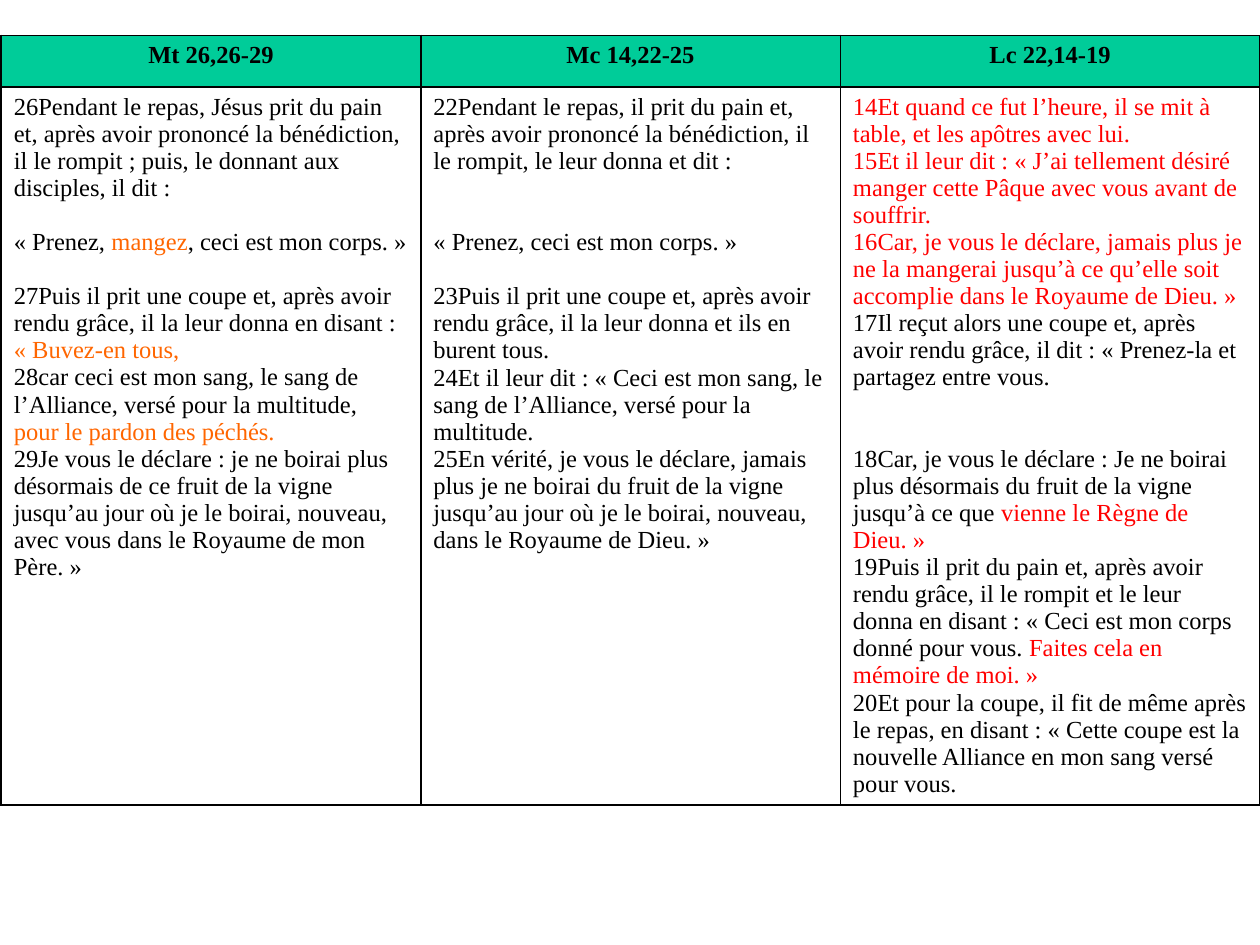
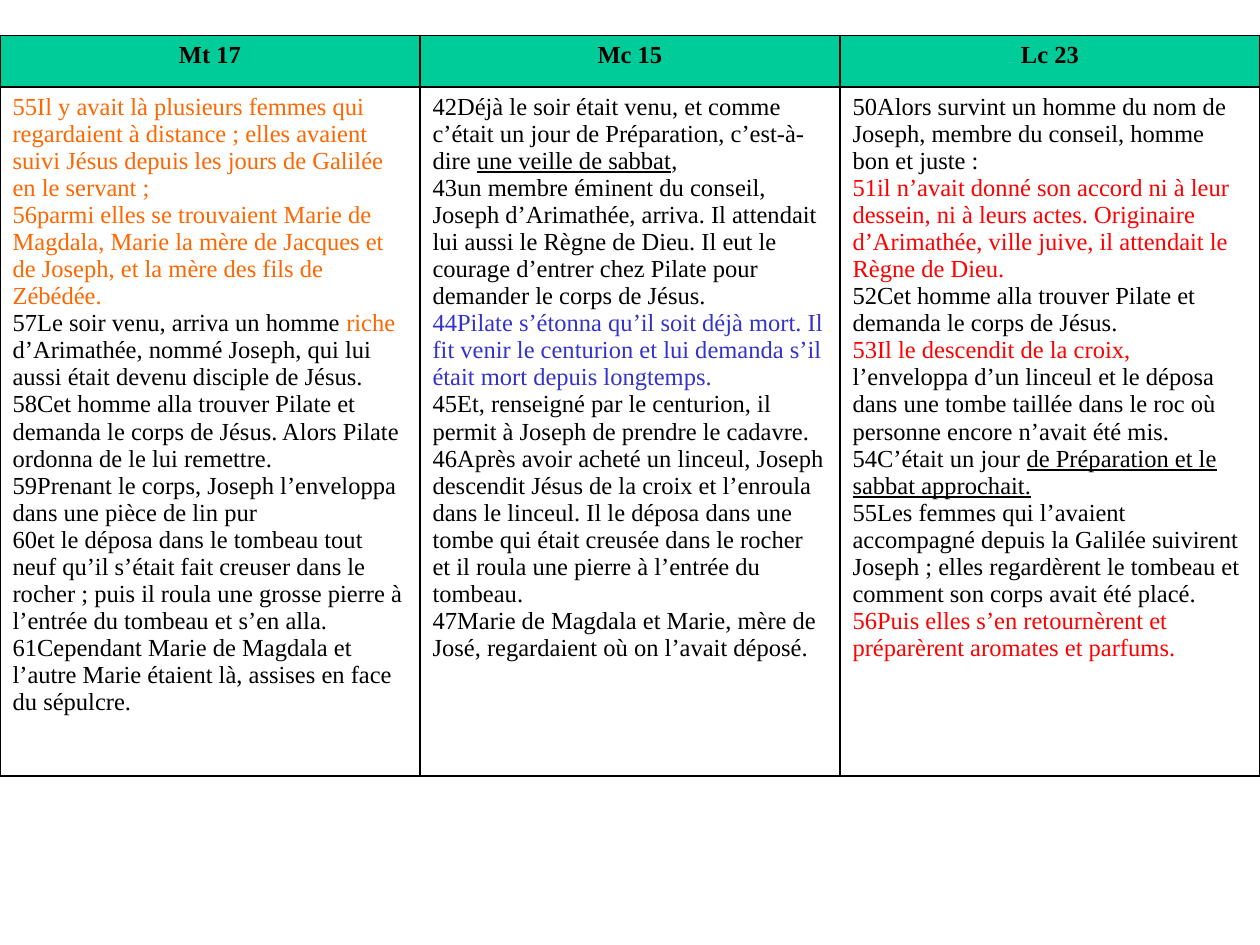
from collections import namedtuple

from lxml import etree
from pptx import Presentation
from pptx.dml.color import RGBColor
from pptx.enum.text import PP_ALIGN
from pptx.oxml.ns import qn
from pptx.util import Inches, Pt

BLACK = RGBColor(0x00, 0x00, 0x00)
WHITE = RGBColor(0xFF, 0xFF, 0xFF)
GREEN = RGBColor(0x00, 0xCC, 0x99)
ORANGE = RGBColor(0xFF, 0x66, 0x00)
RED = RGBColor(0xFF, 0x00, 0x00)
BLUE = RGBColor(0x33, 0x33, 0xCC)

Run = namedtuple("Run", "text color underline", defaults=(BLACK, False))
Verse = namedtuple("Verse", "runs gap")


def verse(*runs, gap=0):
    """One paragraph; gap is the number of free lines above it."""
    return Verse([r if isinstance(r, Run) else Run(r) for r in runs], gap)


# The Last Supper
SUPPER = {
    "Mt 26,26-29": [
        verse("26Pendant le repas, Jésus prit du pain et, après avoir prononcé la "
              "bénédiction, il le rompit ; puis, le donnant aux disciples, il dit :"),
        verse("« Prenez, ", Run("mangez", ORANGE), ", ceci est mon corps. »", gap=1),
        verse("27Puis il prit une coupe et, après avoir rendu grâce, il la leur "
              "donna en disant : ", Run("« Buvez-en tous,", ORANGE), gap=1),
        verse("28car ceci est mon sang, le sang de l’Alliance, versé pour la "
              "multitude, ", Run("pour le pardon des péchés.", ORANGE)),
        verse("29Je vous le déclare : je ne boirai plus désormais de ce fruit de la "
              "vigne jusqu’au jour où je le boirai, nouveau, avec vous dans le "
              "Royaume de mon Père. »"),
    ],
    "Mc 14,22-25": [
        verse("22Pendant le repas, il prit du pain et, après avoir prononcé la "
              "bénédiction, il le rompit, le leur donna et dit :"),
        verse("« Prenez, ceci est mon corps. »", gap=2),
        verse("23Puis il prit une coupe et, après avoir rendu grâce, il la leur "
              "donna et ils en burent tous.", gap=1),
        verse("24Et il leur dit : « Ceci est mon sang, le sang de l’Alliance, versé "
              "pour la multitude."),
        verse("25En vérité, je vous le déclare, jamais plus je ne boirai du fruit de "
              "la vigne jusqu’au jour où je le boirai, nouveau, dans le Royaume de "
              "Dieu. »"),
    ],
    "Lc 22,14-19": [
        verse(Run("14Et quand ce fut l’heure, il se mit à table, et les apôtres avec "
                  "lui.", RED)),
        verse(Run("15Et il leur dit : « J’ai tellement désiré manger cette Pâque avec "
                  "vous avant de souffrir.", RED)),
        verse(Run("16Car, je vous le déclare, jamais plus je ne la mangerai jusqu’à "
                  "ce qu’elle soit accomplie dans le Royaume de Dieu. »", RED)),
        verse("17Il reçut alors une coupe et, après avoir rendu grâce, il dit : "
              "« Prenez-la et partagez entre vous."),
        verse("18Car, je vous le déclare : Je ne boirai plus désormais du fruit de "
              "la vigne jusqu’à ce que ", Run("vienne le Règne de Dieu. »", RED), gap=2),
        verse("19Puis il prit du pain et, après avoir rendu grâce, il le rompit et "
              "le leur donna en disant : « Ceci est mon corps donné pour vous. ",
              Run("Faites cela en mémoire de moi. »", RED)),
        verse("20Et pour la coupe, il fit de même après le repas, en disant : "
              "« Cette coupe est la nouvelle Alliance en mon sang versé pour vous."),
    ],
}

# The burial
BURIAL = {
    "Mt 17": [
        verse(Run("55Il y avait là plusieurs femmes qui regardaient à distance ; elles "
                  "avaient suivi Jésus depuis les jours de Galilée en le servant ;",
                  ORANGE)),
        verse(Run("56parmi elles se trouvaient Marie de Magdala, Marie la mère de "
                  "Jacques et de Joseph, et la mère des fils de Zébédée.", ORANGE)),
        verse("57Le soir venu, arriva un homme ", Run("riche", ORANGE),
              " d’Arimathée, nommé Joseph, qui lui aussi était devenu disciple de "
              "Jésus."),
        verse("58Cet homme alla trouver Pilate et demanda le corps de Jésus. Alors "
              "Pilate ordonna de le lui remettre."),
        verse("59Prenant le corps, Joseph l’enveloppa dans une pièce de lin pur"),
        verse("60et le déposa dans le tombeau tout neuf qu’il s’était fait creuser "
              "dans le rocher ; puis il roula une grosse pierre à l’entrée du "
              "tombeau et s’en alla."),
        verse("61Cependant Marie de Magdala et l’autre Marie étaient là, assises en "
              "face du sépulcre."),
    ],
    "Mc 15": [
        verse("42Déjà le soir était venu, et comme c’était un jour de Préparation, "
              "c’est-à-dire ", Run("une veille de sabbat", underline=True), ","),
        verse("43un membre éminent du conseil, Joseph d’Arimathée, arriva. Il "
              "attendait lui aussi le Règne de Dieu. Il eut le courage d’entrer "
              "chez Pilate pour demander le corps de Jésus."),
        verse(Run("44Pilate s’étonna qu’il soit déjà mort. Il fit venir le centurion "
                  "et lui demanda s’il était mort depuis longtemps.", BLUE)),
        verse("45Et, renseigné par le centurion, il permit à Joseph de prendre le "
              "cadavre."),
        verse("46Après avoir acheté un linceul, Joseph descendit Jésus de la croix "
              "et l’enroula dans le linceul. Il le déposa dans une tombe qui était "
              "creusée dans le rocher et il roula une pierre à l’entrée du tombeau."),
        verse("47Marie de Magdala et Marie, mère de José, regardaient où on l’avait "
              "déposé."),
    ],
    "Lc 23": [
        verse("50Alors survint un homme du nom de Joseph, membre du conseil, homme "
              "bon et juste :"),
        verse(Run("51il n’avait donné son accord ni à leur dessein, ni à leurs actes. "
                  "Originaire d’Arimathée, ville juive, il attendait le Règne de "
                  "Dieu.", RED)),
        verse("52Cet homme alla trouver Pilate et demanda le corps de Jésus."),
        verse(Run("53Il le descendit de la croix, ", RED),
              "l’enveloppa d’un linceul et le déposa dans une tombe taillée dans le "
              "roc où personne encore n’avait été mis."),
        verse("54C’était un jour ",
              Run("de Préparation et le sabbat approchait.", underline=True)),
        verse("55Les femmes qui l’avaient accompagné depuis la Galilée suivirent "
              "Joseph ; elles regardèrent le tombeau et comment son corps avait été "
              "placé."),
        verse(Run("56Puis elles s’en retournèrent et préparèrent aromates et "
                  "parfums.", RED)),
    ],
}


class Synopsis:
    """Holds the shared style and the current slide."""

    font = "Times New Roman"
    size = Pt(14)
    line_height = Pt(15.5)
    top = Inches(0.28)
    header_height = Inches(0.41)

    def __init__(self, prs):
        self.prs = prs
        self.s = None

    def slide(self):
        self.s = self.prs.slides.add_slide(self.prs.slide_layouts[6])

    def border(self, cell):
        tc_pr = cell._tc.get_or_add_tcPr()
        for i, side in enumerate(("lnL", "lnR", "lnT", "lnB")):
            ln = etree.Element(qn(f"a:{side}"), w=str(Pt(1)))
            fill = etree.SubElement(ln, qn("a:solidFill"))
            etree.SubElement(fill, qn("a:srgbClr"), val=str(BLACK))
            tc_pr.insert(i, ln)

    def cell(self, cell, verses, fill, bold=False, align=PP_ALIGN.LEFT):
        cell.fill.solid()
        cell.fill.fore_color.rgb = fill
        self.border(cell)
        tf = cell.text_frame
        for i, v in enumerate(verses):
            p = tf.add_paragraph() if i else tf.paragraphs[0]
            p.alignment = align
            p.font.name, p.font.size, p.font.bold = self.font, self.size, bold
            if v.gap:
                p.space_before = v.gap * self.line_height
            for part in v.runs:
                r = p.add_run()
                r.text = part.text
                r.font.color.rgb = part.color
                if part.underline:
                    r.font.underline = True

    def table(self, columns, left, body_height):
        width = self.prs.slide_width - left
        table = self.s.shapes.add_table(2, len(columns), left, self.top, width,
                                        self.header_height + body_height).table
        table.first_row = table.horz_banding = False
        table.rows[0].height = self.header_height
        table.rows[1].height = body_height
        for i, (title, verses) in enumerate(columns.items()):
            table.columns[i].width = width // len(columns)
            self.cell(table.cell(0, i), [verse(title)], GREEN, True, PP_ALIGN.CENTER)
            self.cell(table.cell(1, i), verses, WHITE)


def main():
    prs = Presentation()
    prs.slide_width, prs.slide_height = Inches(10), Inches(7.5)
    synopsis = Synopsis(prs)
    for columns, left, body_height in ((SUPPER, 0.01, 5.7), (BURIAL, 0, 5.47)):
        synopsis.slide()
        synopsis.table(columns, Inches(left), Inches(body_height))
    prs.save("out.pptx")


if __name__ == "__main__":
    main()
